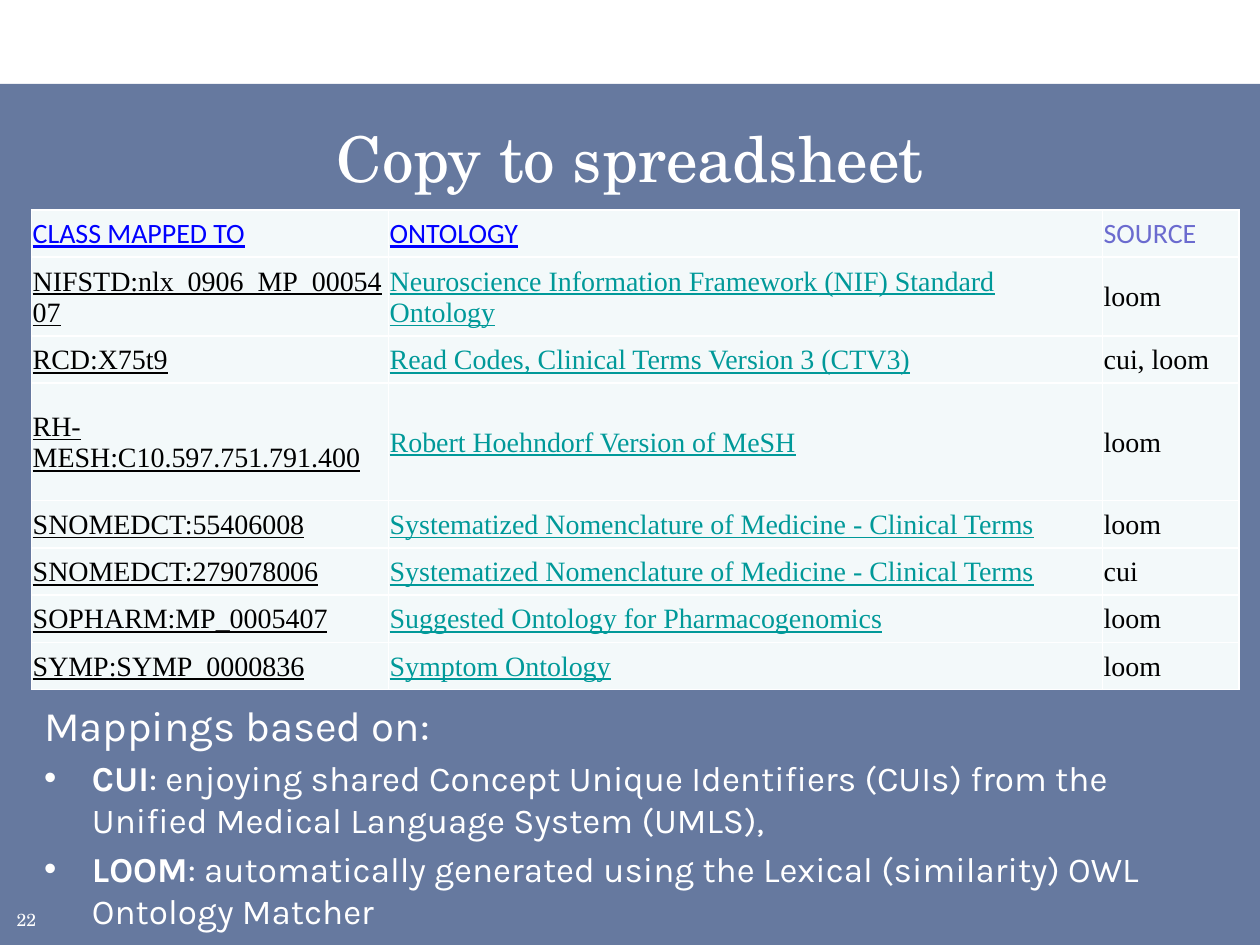
"""Build the slide on mappings copied to a spreadsheet."""
from dataclasses import dataclass
from pptx import Presentation
from pptx.dml.color import RGBColor
from pptx.enum.shapes import MSO_SHAPE
from pptx.enum.text import MSO_ANCHOR, MSO_AUTO_SIZE, PP_ALIGN
from pptx.oxml.ns import qn
from pptx.slide import Slide
from pptx.util import Inches, Pt
from lxml.etree import SubElement

HEADER = ("CLASS MAPPED TO", "ONTOLOGY", "SOURCE")
MAPPINGS = [
    ("NIFSTD:nlx_0906_MP_0005407", "Neuroscience Information Framework (NIF) Standard Ontology", "loom"),
    ("RCD:X75t9", "Read Codes, Clinical Terms Version 3 (CTV3)", "cui, loom"),
    ("RH-MESH:C10.597.751.791.400", "Robert Hoehndorf Version of MeSH", "loom"),
    ("SNOMEDCT:55406008", "Systematized Nomenclature of Medicine - Clinical Terms", "loom"),
    ("SNOMEDCT:279078006", "Systematized Nomenclature of Medicine - Clinical Terms", "cui"),
    ("SOPHARM:MP_0005407", "Suggested Ontology for Pharmacogenomics", "loom"),
    ("SYMP:SYMP_0000836", "Symptom Ontology", "loom"),
]
BASES = [
    ("CUI", ": enjoying shared Concept Unique Identifiers (CUIs) from the Unified Medical Language System (UMLS),"),
    ("LOOM", ": automatically generated using the Lexical (similarity) OWL Ontology Matcher"),
]
COLUMN_WIDTHS = (34, 68, 13)
ROW_HEIGHTS = (4.5, 7.5, 4.5, 11.2, 4.5, 4.5, 4.5, 4.5)


def colour(value):
    """Turn a hex string into a colour."""
    return RGBColor.from_string(value)


def grid(count):
    """Turn a number of grid units, twelve to the inch, into a length."""
    return Inches(count / 12)


def write(para, text, font, size, ink="FFFFFF", bold=False, underline=False):
    """Add a formatted span to a paragraph."""
    span = para.add_run()
    span.text = text
    span.font.name = font
    span.font.size = Pt(size)
    span.font.color.rgb = colour(ink)
    span.font.bold = bold
    span.font.underline = underline


def set_bullet(para, mark=None, ink="FFFFFF"):
    """Give a paragraph a hanging bullet, or none."""
    indent = Inches(0.38) if mark else 0
    properties = para._p.get_or_add_pPr()
    properties.set("marL", str(indent))
    properties.set("indent", str(-indent))
    if mark:
        SubElement(SubElement(properties, qn("a:buClr")), qn("a:srgbClr"), val=ink)
        SubElement(properties, qn("a:buChar"), char=mark)
    else:
        SubElement(properties, qn("a:buNone"))


def set_borders(cell, ink="FFFFFF", width=1):
    """Draw all four borders of a cell."""
    properties = cell._tc.get_or_add_tcPr()
    for side in ("a:lnL", "a:lnR", "a:lnT", "a:lnB"):
        line = SubElement(properties, qn(side), w=str(Pt(width)))
        SubElement(SubElement(line, qn("a:solidFill")), qn("a:srgbClr"), val=ink)


@dataclass
class SlideBuilder:
    """Hold the style and the current slide."""

    page: Slide
    serif: str = "TeX Gyre Schola"
    sans: str = "Karla"
    header_font: str = "Calibri"
    cell_font: str = "Times New Roman"
    cell_fill: str = "F3F9FA"
    panel_fill: str = "002060"

    def place(self, box, left, top, width, height):
        """Move a box to its grid position and fix its text frame."""
        box.left, box.top, box.width, box.height = map(grid, (left, top, width, height))
        box.text_frame.word_wrap = True
        box.text_frame.auto_size = MSO_AUTO_SIZE.NONE
        return box.text_frame

    def panel(self, left, top, width, height, opacity):
        """Add the translucent panel behind everything else."""
        box = self.page.shapes.add_shape(MSO_SHAPE.RECTANGLE, *map(grid, (left, top, width, height)))
        box.shadow.inherit = False
        box.line.fill.background()
        box.fill.solid()
        box.fill.fore_color.rgb = colour(self.panel_fill)
        tint = next(box.element.iter(qn("a:srgbClr")))
        SubElement(tint, qn("a:alpha"), val=str(opacity * 1000))
        self.page.shapes.title.element.addprevious(box.element)

    def title(self, text, *area):
        """Fill the title placeholder."""
        frame = self.place(self.page.shapes.title, *area)
        frame.vertical_anchor = MSO_ANCHOR.MIDDLE
        para = frame.paragraphs[0]
        para.alignment = PP_ALIGN.CENTER
        write(para, text, self.serif, 36)

    def body(self, lead, items, *area):
        """Fill the body placeholder with a lead line and bullets."""
        frame = self.place(self.page.placeholders[1], *area)
        para = frame.paragraphs[0]
        set_bullet(para)
        para.space_before = Pt(0)
        write(para, lead, self.sans, 24)
        for term, meaning in items:
            para = frame.add_paragraph()
            set_bullet(para, "•")
            para.space_before = Pt(4)
            write(para, term, self.sans, 20, bold=True)
            write(para, meaning, self.sans, 20)

    def number(self, text, *area):
        """Add the page number."""
        box = self.page.shapes.add_textbox(0, 0, 0, 0)
        write(self.place(box, *area).paragraphs[0], text, self.serif, 10)

    def cell(self, cell, text, font, ink, underline):
        """Format one table cell."""
        set_borders(cell)
        cell.fill.solid()
        cell.fill.fore_color.rgb = colour(self.cell_fill)
        cell.vertical_anchor = MSO_ANCHOR.MIDDLE
        cell.margin_left = cell.margin_right = cell.margin_top = Inches(0.01)
        cell.margin_bottom = 0
        write(cell.text_frame.paragraphs[0], text, font, 16, ink, underline=underline)

    def table(self, records, left, top):
        """Add the table, whose first record is the header."""
        area = (left, top, sum(COLUMN_WIDTHS), sum(ROW_HEIGHTS))
        table = self.page.shapes.add_table(len(records), len(COLUMN_WIDTHS), *map(grid, area)).table
        table.first_row = table.horz_banding = False
        for column, width in zip(table.columns, COLUMN_WIDTHS):
            column.width = grid(width)
        for index, (row, height, record) in enumerate(zip(table.rows, ROW_HEIGHTS, records)):
            row.height = grid(height)
            font = self.cell_font if index else self.header_font
            inks = ("000000", "009999", "000000") if index else ("0000FF", "0000FF", "6B6BCF")
            for cell, text, ink, linked in zip(row.cells, record, inks, (True, True, False)):
                self.cell(cell, text, font, ink, linked)


def main():
    """Build and save the deck."""
    deck = Presentation()
    deck.slide_width, deck.slide_height = Inches(10), Inches(7.5)
    builder = SlideBuilder(deck.slides.add_slide(deck.slide_layouts[1]))
    builder.panel(0, 8, 120, 82, opacity=60)
    builder.title("Copy to spreadsheet", 3, 10, 114, 10)
    builder.body("Mappings based on:", BASES, 3, 66, 114, 19)
    builder.table([HEADER, *MAPPINGS], 3, 20)
    builder.number("22", 0.4, 86, 4.7, 3)
    deck.save("out.pptx")


if __name__ == "__main__":
    main()
